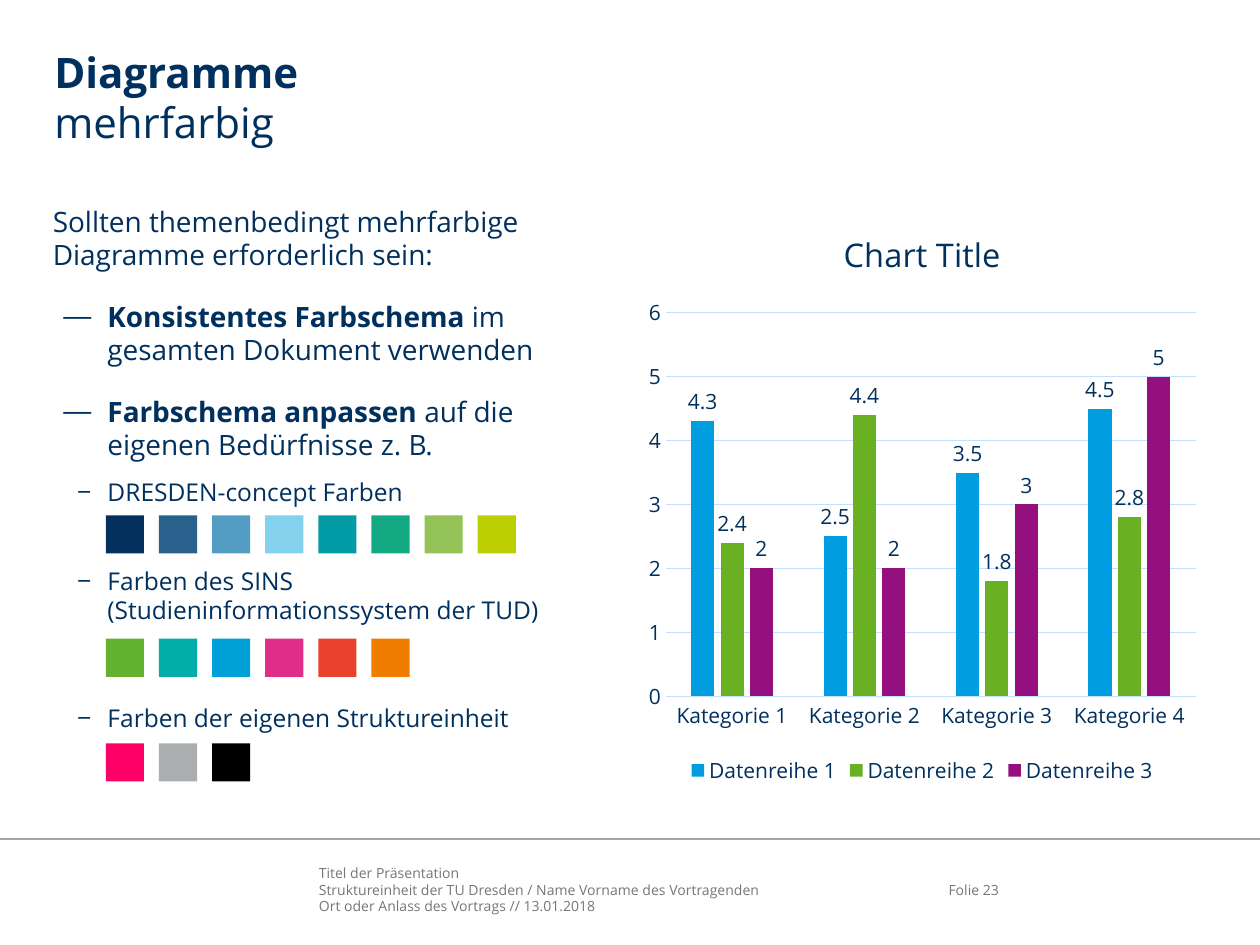
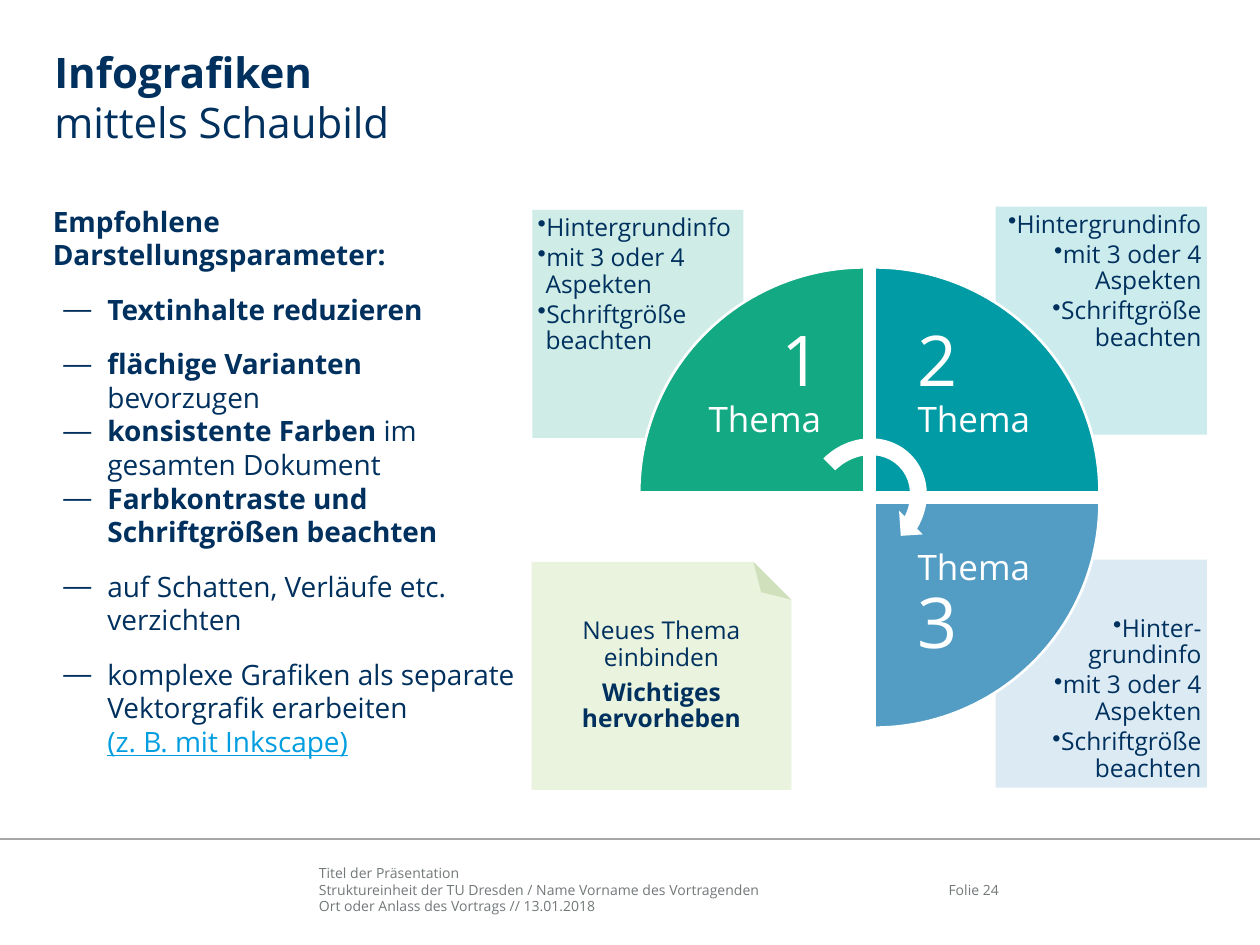
import math
from dataclasses import dataclass

import pptx
import pptx.chart.data
import pptx.dml.color
import pptx.enum.chart
import pptx.enum.shapes
import pptx.enum.text
import pptx.oxml
import pptx.oxml.ns
import pptx.util
from lxml import etree

Pt = pptx.util.Pt
Align = pptx.enum.text.PP_ALIGN
Anchor = pptx.enum.text.MSO_ANCHOR
Shapes = pptx.enum.shapes.MSO_SHAPE
qn = pptx.oxml.ns.qn


class Theme:
    font = "Open Sans"
    navy, grey, rule, white, link = "00305E", "727879", "A6A6A6", "FFFFFF", "009EE0"
    grid = "C1E0FF"
    green, teal, blue, lime, fold = "13A983", "009BA4", "539DC5", "93C356", "D0E0BD"
    series = ["009EE0", "6AB023", "93107E"]
    title, chart_title, body, small, axis, footer = 24, 18.6, 16, 14, 12, 8
    number, topic = 40, 20
    leading = 1.2  # fixed line height of running text, times its size
    tight = 0.9    # proportional line height inside the infographic


@dataclass
class Para:
    runs: list
    before: float = 0
    after: float = 0
    size: float = Theme.body
    bullet: str = ""
    level: int = 0
    margin: float = 0
    hang: float = 0


def dash(*runs, before=0.0, after=0.0):
    return Para(list(runs), before, after, bullet="—", level=1, margin=31.2, hang=25.2)


def subdash(text, before):
    return Para([text], before, size=Theme.small, bullet="−", level=3, margin=31.2, hang=17.3)


def bold(text):
    return text, {"bold": True}


# ---------- content ----------
FOOTER = ["Titel der Präsentation",
          "Struktureinheit der TU Dresden / Name Vorname des Vortragenden",
          "Ort oder Anlass des Vortrags // 13.01.2018"]

CHART_RULES = [
    Para(["Sollten themenbedingt mehrfarbige Diagramme erforderlich sein:"]),
    dash(bold("Konsistentes Farbschema "), "im gesamten Dokument verwenden", before=16),
    dash(bold("Farbschema anpassen "), "auf die eigenen Bedürfnisse z. B.", before=16, after=6),
    subdash("DRESDEN-concept Farben", 3),
    subdash("Farben des SINS\n(Studieninformationssystem der TUD)", 33.8),
    subdash("Farben der eigenen Struktureinheit", 44.8),
]
SWATCH_ROWS = [  # top, colours
    (294.5, ["03305D", "28618C", "539DC5", "84D1EE", "009BA4", "13A983", "93C356", "BCCF02"]),
    (365, ["63B32E", "02ACA8", "00A1D9", "E02D8A", "E8412C", "F07D00"]),
    (424.8, ["FF0066", "AAAEAF", "000000"]),
]
CATEGORIES = ["Kategorie 1", "Kategorie 2", "Kategorie 3", "Kategorie 4"]
SERIES = {"Datenreihe 1": [4.3, 2.5, 3.5, 4.5],
          "Datenreihe 2": [2.4, 4.4, 1.8, 2.8],
          "Datenreihe 3": [2, 2, 3, 5]}

GRAPHIC_RULES = [
    Para([bold("Empfohlene Darstellungsparameter:")]),
    dash(bold("Textinhalte reduzieren"), before=12),
    dash(bold("flächige Varianten "), "bevorzugen", before=12),
    dash(bold("konsistente Farben"), " im gesamten Dokument"),
    dash(bold("Farbkontraste und Schriftgrößen beachten")),
    dash("auf Schatten, Verläufe etc. verzichten", before=12),
    dash("komplexe Grafiken als separate Vektorgrafik erarbeiten\n",
         ("(z. B. mit Inkscape)", {"color": Theme.link, "underline": True}), before=12),
]
ASPECTS = ["mit 3 oder 4 Aspekten", "Schriftgröße beachten"]
INFO_BOXES = [  # left, top, colour, alignment, anchor, first aspect
    (569, 319.8, Theme.blue, Align.RIGHT, Anchor.BOTTOM, "Hinter-grundinfo"),
    (569, 118.1, Theme.teal, Align.RIGHT, Anchor.TOP, "Hintergrundinfo"),
    (304.2, 120, Theme.green, Align.LEFT, Anchor.TOP, "Hintergrundinfo"),
]


def numeral(text):
    return text, {"size": Theme.number}


QUADRANTS = [  # direction from the hub, colour, text
    (-1, -1, Theme.green, [numeral("1"), "\nThema"]),
    (1, -1, Theme.teal, [numeral("2"), "\nThema"]),
    (1, 1, Theme.blue, ["Thema\n", numeral("3")]),
]
NOTE = ["Neues Thema einbinden", bold("Wichtiges hervorheben")]


# ---------- helpers ----------
def rgb(code):
    return pptx.dml.color.RGBColor.from_string(code)


def style_font(font, size=None, color=None, bold=None, underline=None):
    if size:
        font.size = Pt(size)
        font.name = Theme.font
    if color:
        font.color.rgb = rgb(color)
    if bold is not None:
        font.bold = bold
    if underline:
        font.underline = True


def add_runs(paragraph, runs):
    """Add runs, given as text or (text, style); a newline becomes a line break."""
    for run in runs:
        text, style = run if isinstance(run, tuple) else (run, {})
        for number, line in enumerate(text.split("\n")):
            if number:
                paragraph.add_line_break()
            if line:
                span = paragraph.add_run()
                span.text = line
                style_font(span.font, **style)


def write(shape, paras, color=Theme.navy, align=Align.LEFT, anchor=Anchor.TOP,
          insets=(0, 0, 0, 0), spacing=None):
    """Fill a shape with paragraphs; insets run left, top, right, bottom."""
    frame = shape.text_frame
    frame.word_wrap = True
    frame.auto_size = pptx.enum.text.MSO_AUTO_SIZE.NONE
    frame.vertical_anchor = anchor
    frame.margin_left, frame.margin_top, frame.margin_right, frame.margin_bottom = map(Pt, insets)
    for number, para in enumerate(paras):
        paragraph = frame.add_paragraph() if number else frame.paragraphs[0]
        paragraph.level = para.level
        paragraph.alignment = align
        paragraph.line_spacing = spacing or Pt(para.size * Theme.leading)
        paragraph.space_before, paragraph.space_after = Pt(para.before), Pt(para.after)
        props = paragraph._p.get_or_add_pPr()
        props.set("marL", str(Pt(para.margin)))
        props.set("indent", str(Pt(-para.hang)))
        if para.bullet:
            etree.SubElement(props, qn("a:buChar")).set("char", para.bullet)
        else:
            etree.SubElement(props, qn("a:buNone"))
        style_font(paragraph.font, para.size, color, bold=False)
        add_runs(paragraph, para.runs)


def place(shape, left, top, width, height):
    shape.left, shape.top, shape.width, shape.height = map(Pt, (left, top, width, height))


def paint(shape, color, alpha=None, outline=None):
    shape.shadow.inherit = False
    shape.fill.solid()
    shape.fill.fore_color.rgb = rgb(color)
    if alpha:
        tint = shape.fill._xPr.find(qn("a:solidFill"))[0]
        etree.SubElement(tint, qn("a:alpha")).set("val", str(alpha * 1000))
    if outline:
        shape.line.color.rgb = rgb(outline)
        shape.line.width = Pt(1.5)
    else:
        shape.line.fill.background()
    return shape


def add_preset(page, kind, left, top, width, height):
    return page.shapes.add_shape(kind, *map(Pt, (left, top, width, height)))


def add_outline(page, points):
    points = [(Pt(x), Pt(y)) for x, y in points]
    builder = page.shapes.build_freeform(*points[0])
    builder.add_line_segments(points[1:], close=True)
    return builder.convert_to_shape()


def add_text(page, left, top, width, height, paras, **style):
    box = page.shapes.add_textbox(*map(Pt, (left, top, width, height)))
    write(box, paras, **style)


def add_page(deck, heading, subheading, number, rules, body_width):
    """Add a slide with title, list, footer rule, footer and slide number."""
    page = deck.slides.add_slide(deck.slide_layouts[1])
    title, body = page.placeholders
    place(title, 31, 26.6, 658.8, 64)
    write(title, [Para([bold(heading), "\n" + subheading], size=Theme.title)])
    place(body, 30.2, 116.6, body_width, 334.8)
    write(body, rules)

    line = page.shapes.add_connector(pptx.enum.shapes.MSO_CONNECTOR.STRAIGHT,
                                     0, Pt(479.5), deck.slide_width, Pt(479.5))
    line.line.color.rgb = rgb(Theme.rule)
    line.line.width = Pt(1)
    etree.SubElement(line._element.spPr, qn("a:effectLst"))
    add_text(page, 182.2, 493.9, 325.4, 28.8,
             [Para([text], size=Theme.footer) for text in FOOTER], color=Theme.grey)
    add_text(page, 516.2, 493.9, 54.7, 28.8, [Para([f"Folie {number}"], size=Theme.footer)],
             color=Theme.grey, align=Align.RIGHT, anchor=Anchor.MIDDLE)
    return page


# ---------- slide parts ----------
def add_swatches(page):
    size, step, left = 21.8, 30.35, 60.5
    for top, colors in SWATCH_ROWS:
        for column, color in enumerate(colors):
            paint(add_preset(page, Shapes.RECTANGLE, left + column * step, top, size, size), color)


def add_column_chart(page):
    kinds = pptx.enum.chart
    data = pptx.chart.data.CategoryChartData()
    data.categories = CATEGORIES
    for name, values in SERIES.items():
        data.add_series(name, values)
    chart = page.shapes.add_chart(kinds.XL_CHART_TYPE.COLUMN_CLUSTERED,
                                  *map(Pt, (364.3, 116.6, 325.4, 334.8)), data).chart
    style_font(chart.font, Theme.axis, Theme.navy)
    chart.has_title = True
    heading = chart.chart_title.text_frame.paragraphs[0]
    style_font(heading.font, Theme.chart_title, Theme.navy, bold=False)
    add_runs(heading, [("Chart Title", {"size": Theme.chart_title, "color": Theme.navy})])
    chart.has_legend = True
    chart.legend.position = kinds.XL_LEGEND_POSITION.BOTTOM
    chart.legend.include_in_layout = False

    plot = chart.plots[0]
    plot.gap_width, plot.overlap, plot.vary_by_categories = 219, -27, False
    plot.has_data_labels = True
    plot.data_labels.show_value = True
    plot.data_labels.position = kinds.XL_LABEL_POSITION.OUTSIDE_END
    style_font(plot.data_labels.font, Theme.axis, Theme.navy)
    for series, color in zip(plot.series, Theme.series):
        series.format.fill.solid()
        series.format.fill.fore_color.rgb = rgb(color)

    values, names = chart.value_axis, chart.category_axis
    values.minimum_scale, values.maximum_scale, values.major_unit = 0, 6, 1
    values.format.line.fill.background()
    for axis in (values, names):
        axis.major_tick_mark = kinds.XL_TICK_MARK.NONE
        style_font(axis.tick_labels.font, Theme.axis, Theme.navy)
    for line in (values.major_gridlines.format.line, names.format.line):
        line.color.rgb = rgb(Theme.grid)
        line.width = Pt(0.75)


def add_info_boxes(page):
    for left, top, color, align, anchor, first in INFO_BOXES:
        box = paint(add_preset(page, Shapes.RECTANGLE, left, top, 120.6, 130.3), color, alpha=20)
        paras = [Para([text], after=2.1, size=Theme.small, bullet="•", margin=4.5, hang=4.5)
                 for text in [first] + ASPECTS]
        write(box, paras, align=align, anchor=anchor, insets=(3, 3, 3, 3), spacing=Theme.tight)


def add_quadrants(page):
    hub_x, hub_y, gap, radius, steps = 496.8, 284.3, 2.9, 128.6, 45
    for right, down, color, runs in QUADRANTS:
        x, y = hub_x + right * gap, hub_y + down * gap
        angles = [math.pi / 2 * step / steps for step in range(steps + 1)]
        arc = [(x + right * radius * math.cos(a), y + down * radius * math.sin(a)) for a in angles]
        wedge = paint(add_outline(page, [(x, y)] + arc), color, outline=Theme.white)
        sides = (24.6, 37.4) if right > 0 else (37.4, 24.6)
        ends = (28.1, 37.4) if down > 0 else (37.4, 33.8)
        write(wedge, [Para(runs, size=Theme.topic)], color=Theme.white,
              align=Align.LEFT if right > 0 else Align.RIGHT, anchor=Anchor.MIDDLE,
              insets=(sides[0], ends[0], sides[1], ends[1]), spacing=Theme.tight)


def add_note(page):
    left, top, right, bottom, ear = 303.8, 321.1, 452.2, 451.4, 21.6
    cut = [(right - ear, top), (right, top + ear)]
    sheet = add_outline(page, [(left, top)] + cut + [(right, bottom), (left, bottom)])
    write(paint(sheet, Theme.lime, alpha=20),
          [Para([run], after=4.9, size=Theme.small) for run in NOTE],
          align=Align.CENTER, anchor=Anchor.MIDDLE, insets=[11.5] * 4, spacing=Theme.tight)
    inner = (right - ear * 0.8, top + ear * 0.8)
    paint(add_outline(page, cut + [inner]), Theme.fold)


def main():
    deck = pptx.Presentation()
    deck.slide_width, deck.slide_height = Pt(720), Pt(540)

    page = add_page(deck, "Diagramme", "mehrfarbig", 23, CHART_RULES, 325.4)
    add_column_chart(page)
    add_swatches(page)

    page = add_page(deck, "Infografiken", "mittels Schaubild", 24, GRAPHIC_RULES, 264.2)
    add_info_boxes(page)
    add_quadrants(page)
    add_note(page)
    arrow = paint(add_preset(page, Shapes.CIRCULAR_ARROW, 455.8, 244.1, 77, 83.5), Theme.white)
    arrow.rotation = 45
    deck.save("out.pptx")


if __name__ == "__main__":
    main()
